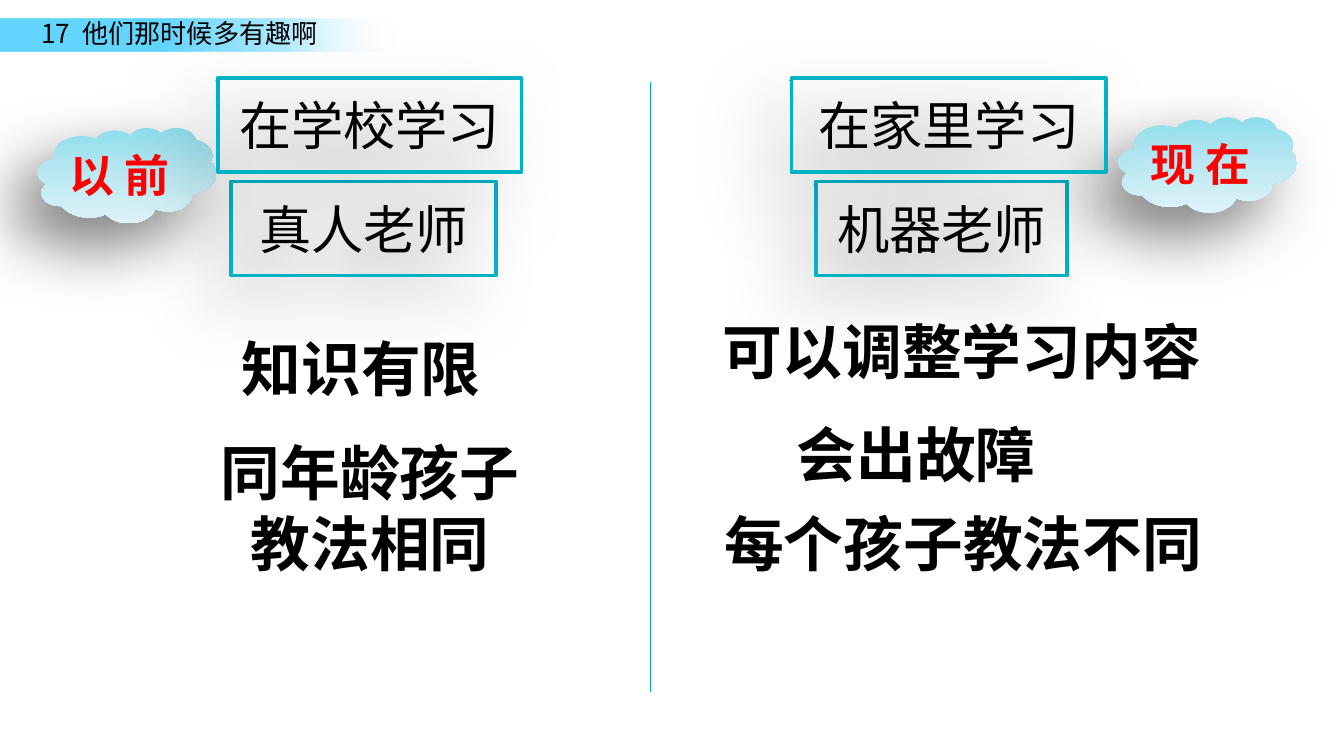
"""Build a slide comparing school learning in the past with learning now."""
from dataclasses import dataclass

import lxml.etree
import pptx
import pptx.dml.color
import pptx.enum.shapes
import pptx.enum.text
import pptx.oxml.ns
import pptx.util

Inches = pptx.util.Inches
Shapes = pptx.enum.shapes.MSO_SHAPE
Text = pptx.enum.text
qn = pptx.oxml.ns.qn


@dataclass(frozen=True)
class Theme:
    font: str = "Noto Sans CJK SC"
    ink: str = "000000"
    accent: str = "FF0000"
    border: str = "02B3C5"
    divider: str = "00B1C3"
    banner: tuple = ((40, "63D6FF", 100), (70, "97E4FF", 76), (97, "FFFFFF", 0))
    cloud: tuple = ((0, "8EDDED", 100), (50, "BBE8F2", 100), (100, "DEF3F8", 100))
    title_size: int = 14
    cloud_size: int = 24
    topic_size: int = 28
    statement_size: int = 32


THEME = Theme()


def rgb(value):
    return pptx.dml.color.RGBColor.from_string(value)


def apply_format(target, values):
    for name, value in values.items():
        setattr(target, name, value)


def add_color(parent, value, alpha):
    color = lxml.etree.SubElement(parent, qn("a:srgbClr"), val=value)
    if alpha < 100:
        lxml.etree.SubElement(color, qn("a:alpha"), val=str(alpha * 1000))


def set_gradient(shape, stops, angle):
    shape.fill.background()
    properties = shape._element.spPr
    gradient = lxml.etree.Element(qn("a:gradFill"), rotWithShape="1")
    stop_list = lxml.etree.SubElement(gradient, qn("a:gsLst"))
    for position, color, alpha in stops:
        stop = lxml.etree.SubElement(stop_list, qn("a:gs"), pos=str(position * 1000))
        add_color(stop, color, alpha)
    lxml.etree.SubElement(gradient, qn("a:lin"), ang=str(angle * 60000), scaled="0")
    properties.replace(properties.find(qn("a:noFill")), gradient)


def set_shadow(shape):
    shape.shadow.inherit = False
    effects = shape._element.spPr.find(qn("a:effectLst"))
    values = {"blurRad": pptx.util.Pt(35), "dist": pptx.util.Pt(20), "dir": 135 * 60000}
    shadow = lxml.etree.SubElement(effects, qn("a:outerShdw"), algn="tr", rotWithShape="0")
    for name, value in values.items():
        shadow.set(name, str(int(value)))
    add_color(shadow, THEME.ink, 50)


def write_text(shape, text, size, color=THEME.ink, bold=False, centered=False, **frame):
    apply_format(shape.text_frame, frame)
    paragraph = shape.text_frame.paragraphs[0]
    paragraph.alignment = Text.PP_ALIGN.CENTER if centered else Text.PP_ALIGN.LEFT
    run = paragraph.add_run()
    run.text = text
    run.font.color.rgb = rgb(color)
    apply_format(run.font, {"size": pptx.util.Pt(size), "bold": bold, "name": THEME.font})
    lxml.etree.SubElement(run._r.get_or_add_rPr(), qn("a:ea"), typeface=THEME.font)


def add_label(shapes, box, text, size, wrap=False, **style):
    label = shapes.add_textbox(*map(Inches, box))
    write_text(label, text, size, word_wrap=wrap,
               auto_size=Text.MSO_AUTO_SIZE.SHAPE_TO_FIT_TEXT, **style)


def add_banner(slide, title):
    banner = slide.shapes.add_shape(Shapes.RECTANGLE, *map(Inches, (0, 0.14, 3.03, 0.24)))
    banner.shadow.inherit = False
    banner.line.fill.background()
    set_gradient(banner, THEME.banner, 180)
    banner._element.spPr.xfrm.set("flipH", "1")
    add_label(slide.shapes, (0.21, 0.08, 2.36, 0.34), title, THEME.title_size)


def add_topic(slide, left, top, width, text):
    topic = slide.shapes.add_shape(Shapes.LINE_CALLOUT_1, *map(Inches, (left, top, width, 0.7)))
    for index, value in enumerate((0.039, -0.002, 0.028, -0.001)):
        topic.adjustments[index] = value
    topic.fill.background()
    topic.line.color.rgb = rgb(THEME.border)
    topic.line.width = pptx.util.Pt(2)
    set_shadow(topic)
    write_text(topic, text, THEME.topic_size, centered=True, word_wrap=True,
               vertical_anchor=Text.MSO_ANCHOR.MIDDLE)


def add_cloud(slide, left, top, text):
    group = slide.shapes.add_group_shape()
    cloud = group.shapes.add_shape(Shapes.CLOUD, *map(Inches, (left, top, 1.33, 0.71)))
    cloud.line.fill.background()
    set_gradient(cloud, THEME.cloud, 90)
    set_shadow(cloud)
    add_label(group.shapes, (left + 0.14, top + 0.1, 1.05, 0.5), text, THEME.cloud_size,
              color=THEME.accent, bold=True)


def add_divider(slide):
    divider = slide.shapes.add_connector(pptx.enum.shapes.MSO_CONNECTOR.STRAIGHT,
                                         *map(Inches, (4.84, 0.61, 4.84, 5.15)))
    divider.line.color.rgb = rgb(THEME.divider)
    divider.line.width = pptx.util.Pt(0.75)
    lxml.etree.SubElement(divider._element.spPr, qn("a:effectLst"))


def main():
    presentation = pptx.Presentation()
    width = Inches(10)
    apply_format(presentation, {"slide_width": width, "slide_height": width * 9 // 16})
    slide = presentation.slides.add_slide(presentation.slide_layouts[6])
    add_banner(slide, "17  他们那时候多有趣啊")
    for left, width, text in ((1.72, 1.97, "真人老师"), (6.07, 1.87, "机器老师")):
        add_topic(slide, left, 1.35, width, text)
    add_label(slide.shapes, (1.51, 3.19, 2.49, 1.18), "同年龄孩子教法相同",
              THEME.statement_size, wrap=True, bold=True, centered=True)
    statements = (
        ((5.83, 3.06, 2, 0.64), "会出故障"),
        ((1.7, 2.42, 2, 0.64), "知识有限"),
        ((5.28, 2.29, 3.81, 0.64), "可以调整学习内容"),
        ((5.29, 3.72, 3.81, 0.64), "每个孩子教法不同"),
    )
    for box, text in statements:
        add_label(slide.shapes, box, text, THEME.statement_size, bold=True)
    add_divider(slide)
    add_cloud(slide, 0.28, 0.95, "以 前")
    add_cloud(slide, 8.32, 0.87, "现 在")
    for left, width, text in ((1.62, 2.26, "在学校学习"), (5.89, 2.34, "在家里学习")):
        add_topic(slide, left, 0.58, width, text)
    presentation.save("out.pptx")


if __name__ == "__main__":
    main()
